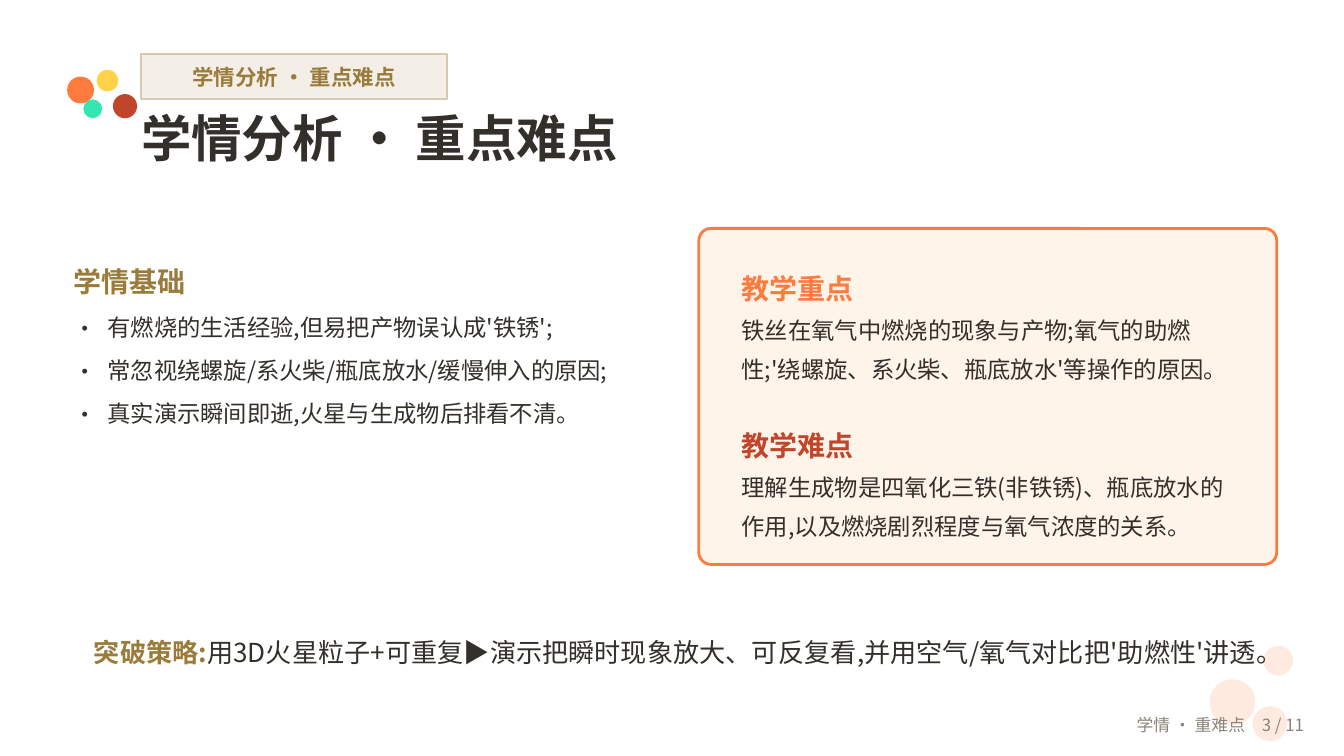
from collections import namedtuple

from lxml import etree
from pptx import Presentation, util as u
from pptx.dml.color import RGBColor
from pptx.enum import shapes, text
from pptx.oxml.ns import qn

FONT = "Noto Sans CJK SC"
INK = RGBColor(0x33, 0x30, 0x2B)
GOLD = RGBColor(0x9A, 0x7B, 0x3A)
GREY = RGBColor(0x8A, 0x84, 0x78)
ORANGE = RGBColor(0xFF, 0x7A, 0x3D)
RED = RGBColor(0xC0, 0x45, 0x2A)
YELLOW = RGBColor(0xFF, 0xD2, 0x4A)
MINT = RGBColor(0x36, 0xE6, 0xB0)
BLUSH = RGBColor(0xFF, 0xEA, 0xE0)
CREAM = RGBColor(0xFF, 0xF4, 0xEA)
SAND = RGBColor(0xF3, 0xEF, 0xE7)
SAND_EDGE = RGBColor(0xD7, 0xCA, 0xB0)

# The slide is a 16:9 grid of 100 columns by 56.25 rows of square cells.
COLUMNS, ROWS = 100, 56.25
CELL = u.Inches(0.1)
HEADING, BODY = 15, 12.5
TOPIC = "学情分析 · 重点难点"

Box = namedtuple("Box", "left top width height")


def inside(box, left, top, width, height):
    """Box placed at an offset from the corner of another box."""
    return Box(box.left + left, box.top + top, width, height)


def emu(box):
    return [round(cells * CELL) for cells in box]


def style(font, size, color, bold=False):
    font.size, font.bold, font.name = u.Pt(size), bold, FONT
    font.color.rgb = color
    etree.SubElement(font._rPr, qn("a:ea")).set("typeface", FONT)


def add_shape(slide, kind, box, fill, line=None, weight=1):
    shape = slide.shapes.add_shape(kind, *emu(box))
    shape.shadow.inherit = False
    shape.fill.solid()
    shape.fill.fore_color.rgb = fill
    if line is None:
        shape.line.fill.background()
    else:
        shape.line.color.rgb = line
        shape.line.width = u.Pt(weight)
    return shape


def set_frame(shape, anchor=text.MSO_ANCHOR.TOP, inset=True):
    frame = shape.text_frame
    frame.word_wrap = True
    frame.vertical_anchor = anchor
    if not inset:
        frame.margin_left = frame.margin_right = 0
        frame.margin_top = frame.margin_bottom = 0
    return frame


def add_text(slide, box, **options):
    return set_frame(slide.shapes.add_textbox(*emu(box)), **options)


def add_paragraph(frame, words, size, color, bold=False, spacing=None, bullet=None):
    first = frame.paragraphs[0]
    paragraph = frame.add_paragraph() if first.runs else first
    paragraph.add_run().text = words
    if spacing:
        paragraph.line_spacing = u.Pt(spacing)
    if bullet:
        properties = paragraph._p.get_or_add_pPr()
        indent = u.Inches(0.25)
        properties.set("marL", str(indent))
        properties.set("indent", str(-indent))
        etree.SubElement(properties, qn("a:buFont")).set("typeface", FONT)
        etree.SubElement(properties, qn("a:buChar")).set("char", bullet)
    style(paragraph.font, size, color, bold)
    return paragraph


def add_dots(slide, box, dots):
    for left, top, diameter, color in dots:
        add_shape(slide, shapes.MSO_SHAPE.OVAL,
                  inside(box, left, top, diameter, diameter), color)


def add_header(slide, box):
    add_dots(slide, inside(box, 0, 1.2, 5.2, 3.6), [
        (0, 0.5, 2, ORANGE), (2.2, 0, 1.6, YELLOW),
        (1.2, 2.2, 1.4, MINT), (3.4, 1.8, 1.8, RED)])
    tag = add_shape(slide, shapes.MSO_SHAPE.RECTANGLE,
                    inside(box, 5.5, 0, 22.75, 3.4), SAND, SAND_EDGE)
    frame = set_frame(tag, anchor=text.MSO_ANCHOR.MIDDLE, inset=False)
    paragraph = add_paragraph(frame, TOPIC, 11.5, GOLD, True)
    paragraph.alignment = text.PP_ALIGN.CENTER
    title = add_text(slide, inside(box, 5.5, 4, box.width - 5.5, 5.5), inset=False)
    add_paragraph(title, TOPIC, 27, INK, True)


def add_learners(slide, box):
    frame = add_text(slide, box, inset=False)
    add_paragraph(frame, "学情基础", HEADING, GOLD, True, 23)
    for point in ("有燃烧的生活经验,但易把产物误认成'铁锈';",
                  "常忽视绕螺旋/系火柴/瓶底放水/缓慢伸入的原因;",
                  "真实演示瞬间即逝,火星与生成物后排看不清。"):
        add_paragraph(frame, point, BODY, INK, spacing=23, bullet="·")


def add_focus_card(slide, box):
    card = add_shape(slide, shapes.MSO_SHAPE.ROUNDED_RECTANGLE, box,
                     CREAM, ORANGE, 1.5)
    card.adjustments[0] = 0.036
    frame = add_text(slide, inside(box, 2.2, 2, box.width - 3.8, box.height - 3),
                     anchor=text.MSO_ANCHOR.MIDDLE)
    sections = [
        ("教学重点", ORANGE, "铁丝在氧气中燃烧的现象与产物;氧气的助燃性;"
         "'绕螺旋、系火柴、瓶底放水'等操作的原因。"),
        ("教学难点", RED, "理解生成物是四氧化三铁(非铁锈)、瓶底放水的作用,"
         "以及燃烧剧烈程度与氧气浓度的关系。")]
    for index, (heading, color, body) in enumerate(sections):
        paragraph = add_paragraph(frame, heading, HEADING, color, True, 21)
        if index:
            paragraph.space_before = u.Pt(21)
        add_paragraph(frame, body, BODY, INK, spacing=21)


def add_strategy(slide, box):
    frame = add_text(slide, box, anchor=text.MSO_ANCHOR.MIDDLE)
    paragraph = frame.paragraphs[0]
    paragraph.line_spacing = u.Pt(24)
    for words, color, bold in (
            ("突破策略:", GOLD, True),
            ("用3D火星粒子+可重复▶演示把瞬时现象放大、可反复看,"
             "并用空气/氧气对比把'助燃性'讲透。", INK, False)):
        run = paragraph.add_run()
        run.text = words
        style(run.font, 14, color, bold)


def add_footer(slide, box):
    frame = add_text(slide, box, anchor=text.MSO_ANCHOR.MIDDLE)
    paragraph = add_paragraph(frame, "学情 · 重难点　3 / 11", 9, GREY)
    paragraph.alignment = text.PP_ALIGN.RIGHT


def main():
    presentation = Presentation()
    presentation.slide_width = round(COLUMNS * CELL)
    presentation.slide_height = round(ROWS * CELL)
    slide = presentation.slides.add_slide(presentation.slide_layouts[6])
    add_dots(slide, Box(90, ROWS - 8.2, 6.2, 7.1), [
        (0, 2.5, 3.4, BLUSH), (4, 0, 2.2, BLUSH), (3.2, 4.5, 2.6, BLUSH)])
    add_header(slide, Box(5, 4, 89.5, 9.5))
    add_learners(slide, Box(5.5, 19, 45, 18))
    add_focus_card(slide, Box(52, 17, 43, 25))
    add_strategy(slide, Box(6, 44.5, 88.5, 7))
    add_footer(slide, Box(80, ROWS - 3.8, 18, 3))
    presentation.save("out.pptx")


if __name__ == "__main__":
    main()
